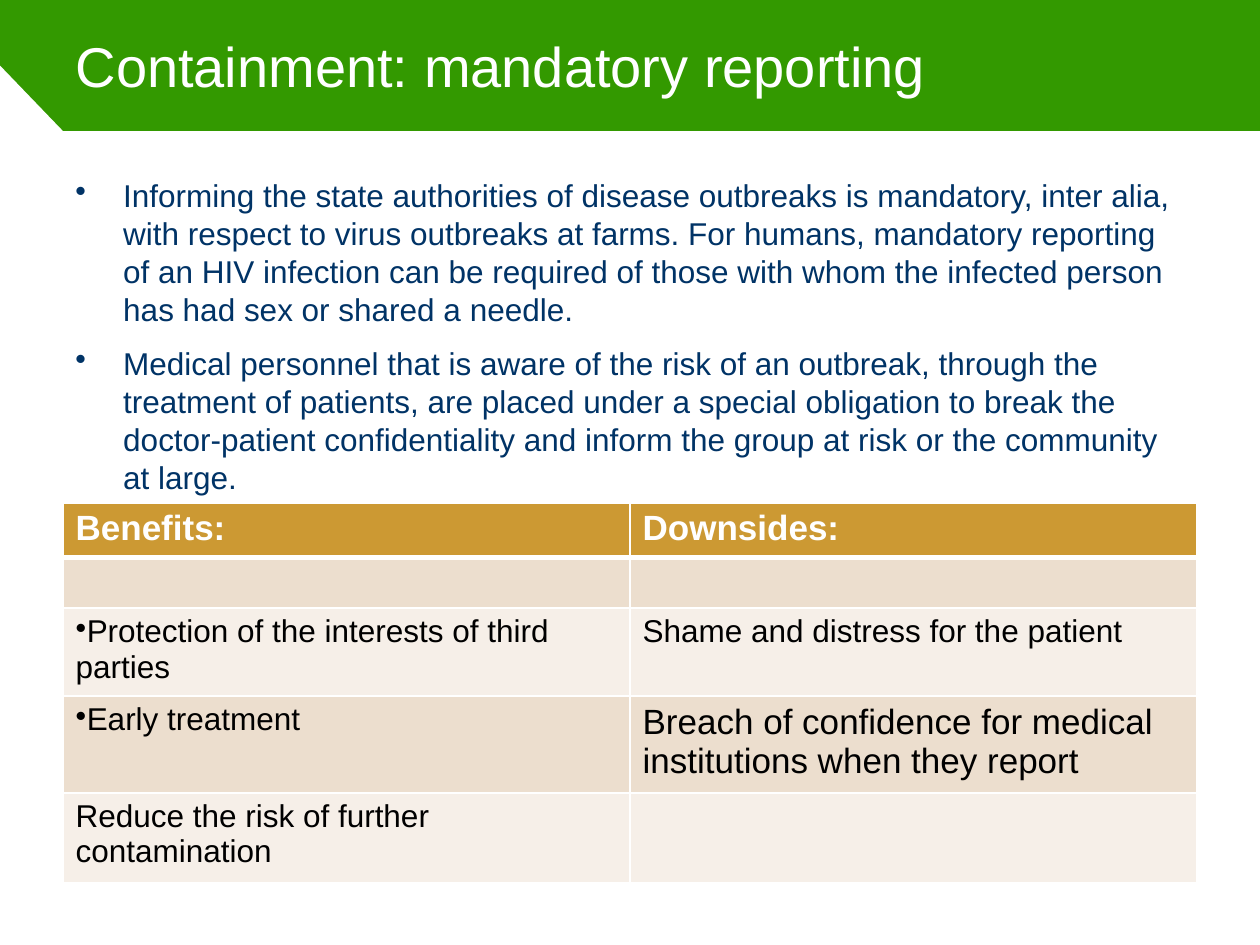
from lxml import etree
from pptx import Presentation, util as u
from pptx.dml.color import RGBColor
from pptx.enum import text as t
from pptx.oxml.ns import qn

WIDE, HIGH = 10, 7.5
EDGE, BAND = 0.05 * WIDE, 1.04
SPAN = WIDE - 2 * EDGE
GREEN, NAVY, GOLD, WHITE, BLACK = "339900", "003366", "CC9933", "FFFFFF", "000000"
STRIPES = ["ECDECE", "F6EFE8"]

TITLE = "Containment: mandatory reporting"
POINTS = [
    "Informing the state authorities of disease outbreaks is mandatory, inter alia, "
    "with respect to virus outbreaks at farms. For humans, mandatory reporting of an "
    "HIV infection can be required of those with whom the infected person has had sex "
    "or shared a needle.",
    "Medical personnel that is aware of the risk of an outbreak, through the treatment "
    "of patients, are placed under a special obligation to break the doctor-patient "
    "confidentiality and inform the group at risk or the community at large.",
]
# Each row: height, then (text, size, bulleted) or None for each cell
ROWS = [
    (0.39, [("Benefits:", 20, False), ("Downsides:", 20, False)]),
    (0.4, [None, None]),
    (0.65, [("Protection of the interests of third parties", 18, True),
            ("Shame and distress for the patient", 18, False)]),
    (0.71, [("Early treatment", 18, True),
            ("Breach of confidence for medical institutions when they report", 20, False)]),
    (0.71, [("Reduce the risk of further contamination", 18, False), None]),
]


def rgb(code):
    return RGBColor.from_string(code)


def paint(fill, code):
    fill.solid()
    fill.fore_color.rgb = rgb(code)


def write(par, words, size, code, bold=False):
    run = par.add_run()
    run.text = words
    font = run.font
    font.name, font.size, font.bold = "Arial", u.Pt(size), bold
    font.color.rgb = rgb(code)


def bullet(par, indent):
    props = par._p.get_or_add_pPr()
    props.set("marL", str(u.Inches(indent)))
    props.set("indent", str(-u.Inches(indent)))
    etree.SubElement(props, qn("a:buChar"), char="•")


def border(cell, top, bottom):
    props = cell._tc.get_or_add_tcPr()
    for side, width in zip("LRTB", (1, 1, top, bottom)):
        line = etree.SubElement(props, qn("a:ln" + side), w=str(u.Pt(width)))
        fill = etree.SubElement(line, qn("a:solidFill"))
        etree.SubElement(fill, qn("a:srgbClr"), val=WHITE)


def add_page(slide):
    """White page below the green band, with its top left corner cut."""
    paint(slide.background.fill, GREEN)
    spots = [(0, BAND / 2), (EDGE, BAND), (WIDE, BAND), (WIDE, HIGH), (0, HIGH)]
    start, *rest = [(u.Inches(x), u.Inches(y)) for x, y in spots]
    pen = slide.shapes.build_freeform(*start)
    pen.add_line_segments(rest)
    page = pen.convert_to_shape()
    page.shadow.inherit = False
    paint(page.fill, WHITE)
    page.line.fill.background()


def add_title(slide):
    title = slide.shapes.title
    title.left, title.top = u.Inches(EDGE), 0
    title.width, title.height = u.Inches(SPAN), u.Inches(BAND)
    frame = title.text_frame
    frame.vertical_anchor = t.MSO_ANCHOR.MIDDLE
    par = frame.paragraphs[0]
    par.alignment = t.PP_ALIGN.LEFT
    write(par, TITLE, 32, WHITE)


def add_points(slide):
    box = slide.shapes.add_textbox(*map(u.Inches, (EDGE, 1.35, SPAN, 2.64)))
    frame = box.text_frame
    frame.word_wrap = True
    for i, words in enumerate(POINTS):
        par = frame.add_paragraph() if i else frame.paragraphs[0]
        bullet(par, 0.38)
        par.space_before = u.Pt(3.6 if i else 0)
        par.space_after = u.Pt(6)
        write(par, words, 18, NAVY)


def add_grid(slide):
    tall = sum(high for high, _ in ROWS)
    spot = map(u.Inches, (EDGE, 3.99, SPAN, tall))
    grid = slide.shapes.add_table(len(ROWS), 2, *spot).table
    for r, (high, cells) in enumerate(ROWS):
        grid.rows[r].height = u.Inches(high)
        head = r == 0
        for c, item in enumerate(cells):
            cell = grid.cell(r, c)
            border(cell, 3 if r == 1 else 1, 3 if head else 1)
            paint(cell.fill, GOLD if head else STRIPES[(r - 1) % 2])
            if item:
                words, size, dot = item
                par = cell.text_frame.paragraphs[0]
                if dot:
                    bullet(par, 0)
                write(par, words, size, WHITE if head else BLACK, head)


def main():
    deck = Presentation()
    deck.slide_width, deck.slide_height = u.Inches(WIDE), u.Inches(HIGH)
    slide = deck.slides.add_slide(deck.slide_layouts[5])
    add_page(slide)
    add_title(slide)
    add_points(slide)
    add_grid(slide)
    deck.save("out.pptx")


if __name__ == "__main__":
    main()
